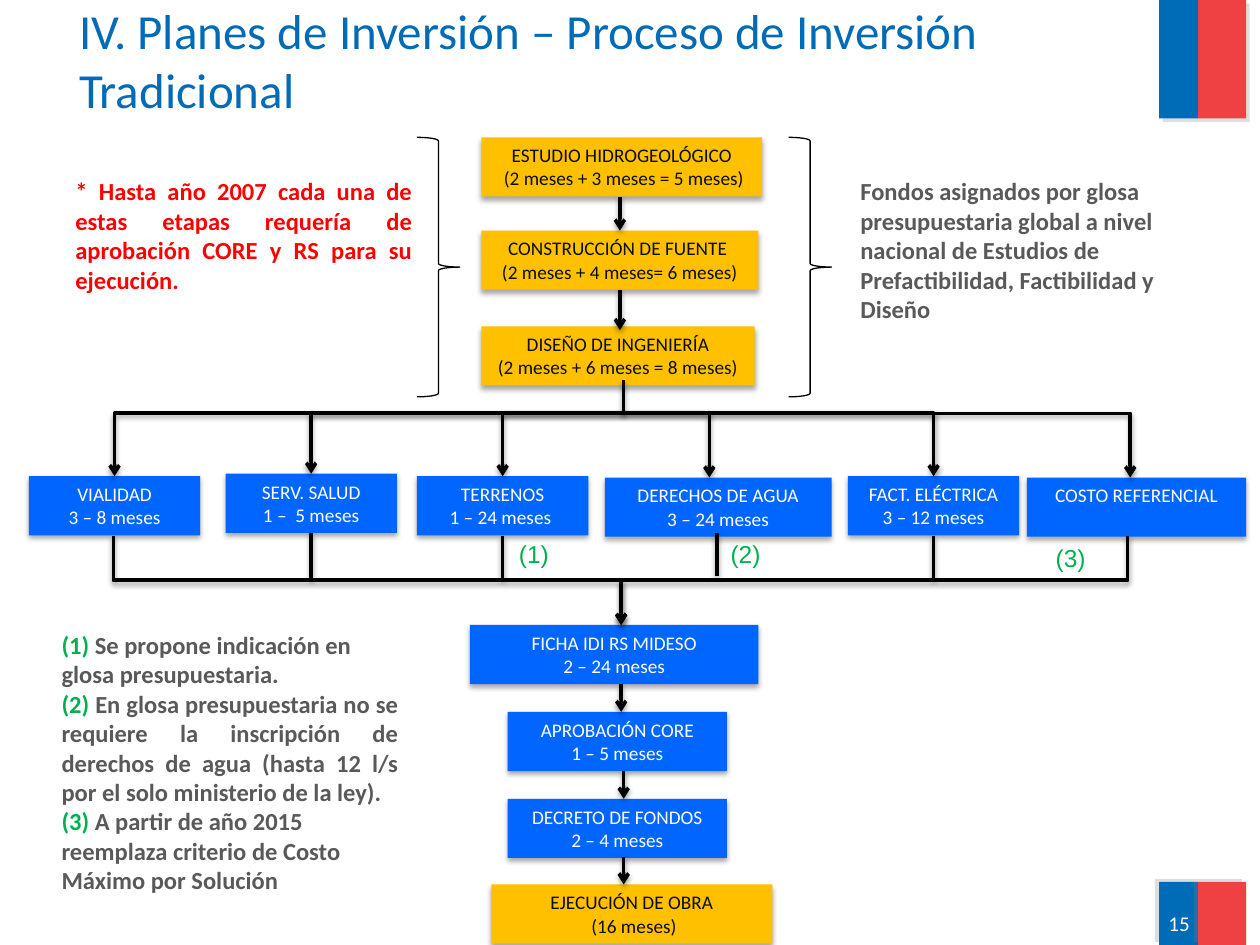
from dataclasses import dataclass

from lxml import etree
from pptx import Presentation
from pptx.dml.color import RGBColor
from pptx.enum.shapes import MSO_CONNECTOR, MSO_SHAPE
from pptx.enum.text import MSO_ANCHOR, PP_ALIGN
from pptx.oxml.ns import qn
from pptx.util import Inches, Pt

RECTANGLE, RIGHT_BRACE = MSO_SHAPE.RECTANGLE, MSO_SHAPE.RIGHT_BRACE
STRAIGHT, ELBOW = MSO_CONNECTOR.STRAIGHT, MSO_CONNECTOR.ELBOW
LEFT, CENTER, RIGHT, JUSTIFY = PP_ALIGN.LEFT, PP_ALIGN.CENTER, PP_ALIGN.RIGHT, PP_ALIGN.JUSTIFY
TOP, MIDDLE = MSO_ANCHOR.TOP, MSO_ANCHOR.MIDDLE
TOP_SITE, BOTTOM_SITE = 0, 2


@dataclass(frozen=True)
class Theme:
    font: str = "Calibri"
    mark_font: str = "Arial"
    title_blue: str = "006CB7"
    flag_red: str = "EF4144"
    amber: str = "FFC000"
    blue: str = "0066FF"
    black: str = "000000"
    dark: str = "0D0D0D"
    white: str = "FFFFFF"
    gray: str = "595959"
    red: str = "FF0000"
    green: str = "00B050"
    title_size: int = 28
    note_size: int = 14
    number_size: int = 12
    box_size: int = 11
    line_width: float = 2
    brace_width: float = 0.75
    # Shadows: colour, opacity %, blur pt, distance pt, angle
    box_shadow: tuple = ("000000", 35, 3.1, 1.8, 90)
    line_shadow: tuple = ("000000", 38, 3.1, 1.6, 90)
    flag_shadow: tuple = ("808080", 25, 0, 3, 45)
    foot_shadow: tuple = ("808080", 25, 0, 3, 215)


class FlowSlide:
    def __init__(self, slide, theme):
        self.shapes = slide.shapes
        self.theme = theme

    def cast_shadow(self, effects, shadow):
        color, opacity, blur, distance, angle = shadow
        outer = etree.SubElement(
            effects, qn("a:outerShdw"), blurRad=str(Pt(blur)), dist=str(Pt(distance)),
            dir=str(angle * 60000), rotWithShape="0")
        tint = etree.SubElement(outer, qn("a:srgbClr"), val=color)
        etree.SubElement(tint, qn("a:alpha"), val=str(opacity * 1000))

    def fill_text(self, shape, paragraphs, size, font=None, bold=False, anchor=TOP):
        """Each paragraph is (alignment, [(text, color), ...])."""
        frame = shape.text_frame
        frame.word_wrap = True
        frame.vertical_anchor = anchor
        for index, (alignment, runs) in enumerate(paragraphs):
            paragraph = frame.add_paragraph() if index else frame.paragraphs[0]
            paragraph.alignment = alignment
            for text, color in runs:
                run = paragraph.add_run()
                run.text = text
                run.font.name = font or self.theme.font
                run.font.size = Pt(size)
                run.font.bold = bold
                run.font.color.rgb = RGBColor.from_string(color)

    def text(self, left, top, width, height, paragraphs, size, **style):
        shape = self.shapes.add_textbox(*map(Inches, (left, top, width, height)))
        self.fill_text(shape, paragraphs, size, **style)

    def block(self, left, top, width, height, color, shadow):
        shape = self.shapes.add_shape(RECTANGLE, *map(Inches, (left, top, width, height)))
        shape.fill.solid()
        shape.fill.fore_color.rgb = RGBColor.from_string(color)
        shape.line.fill.background()
        shape.shadow.inherit = False
        self.cast_shadow(shape._element.spPr.find(qn("a:effectLst")), shadow)
        return shape

    def box(self, left, top, width, lines, color):
        theme = self.theme
        shape = self.block(left, top, width, 0.47, color, theme.box_shadow)
        ink = theme.dark if color == theme.amber else theme.white
        self.fill_text(shape, [(CENTER, [(line, ink)]) for line in lines], theme.box_size)
        return shape

    def brace(self, left, top, width, height):
        shape = self.shapes.add_shape(RIGHT_BRACE, *map(Inches, (left, top, width, height)))
        shape.fill.background()
        shape.line.color.rgb = RGBColor.from_string(self.theme.black)
        shape.line.width = Pt(self.theme.brace_width)
        shape.shadow.inherit = False

    def connector(self, kind, begin, end, arrow):
        line = self.shapes.add_connector(kind, *map(Inches, (*begin, *end)))
        line.line.color.rgb = RGBColor.from_string(self.theme.black)
        line.line.width = Pt(self.theme.line_width)
        properties = line._element.spPr
        if arrow:
            etree.SubElement(properties.find(qn("a:ln")), qn("a:tailEnd"), type="arrow")
        self.cast_shadow(etree.SubElement(properties, qn("a:effectLst")), self.theme.line_shadow)
        return line

    def straight(self, x, top, bottom, arrow=True, source=None, target=None):
        line = self.connector(STRAIGHT, (x, top), (x, bottom), arrow)
        if source is not None:
            line.begin_connect(source, BOTTOM_SITE)
        if target is not None:
            line.end_connect(target, TOP_SITE)

    def branch(self, begin, end):
        """One bend: across, then down."""
        line = self.connector(ELBOW, begin, end, True)
        line._element.spPr.find(qn("a:prstGeom")).set("prst", "bentConnector2")

    def gather(self, begin, end):
        """Two bends: down, across, down, as a quarter-turned elbow."""
        (x1, y1), (x2, y2) = begin, end
        middle_x, middle_y = (x1 + x2) / 2, (y1 + y2) / 2
        half_x, half_y = (x2 - x1) / 2, (y2 - y1) / 2
        line = self.connector(ELBOW, (middle_x - half_y, middle_y + half_x),
                              (middle_x + half_y, middle_y - half_x), True)
        line._element.spPr.find(qn("a:xfrm")).set("rot", str(90 * 60000))


def main():
    theme = Theme()
    presentation = Presentation()
    presentation.slide_width, presentation.slide_height = Inches(10), Inches(7.5)
    flow = FlowSlide(presentation.slides.add_slide(presentation.slide_layouts[6]), theme)

    # Colour bars, page number and title
    for top, height, shadow in ((0, 0.94, theme.flag_shadow), (7, 0.5, theme.foot_shadow)):
        flow.block(9.2, top, 0.31, height, theme.title_blue, shadow)
        flow.block(9.51, top, 0.38, height, theme.flag_red, shadow)
    flow.text(9.02, 7.13, 0.52, 0.4, [(RIGHT, [("15", theme.white)])],
              theme.number_size, anchor=MIDDLE)
    flow.text(0.53, 0, 8.5, 0.94,
              [(LEFT, [("IV. Planes de Inversión – Proceso de Inversión Tradicional", theme.title_blue)])],
              theme.title_size, anchor=MIDDLE)

    # Main column, top to bottom
    steps = [
        (3.82, 1.09, 2.23, ("ESTUDIO HIDROGEOLÓGICO", " (2 meses + 3 meses = 5 meses)"), theme.amber),
        (3.82, 1.83, 2.2, ("CONSTRUCCIÓN DE FUENTE ", "(2 meses + 4 meses= 6 meses)"), theme.amber),
        (3.82, 2.59, 2.17, ("DISEÑO DE INGENIERÍA", "(2 meses + 6 meses = 8 meses)"), theme.amber),
        (3.73, 4.96, 2.29, ("FICHA IDI RS MIDESO", "2 – 24 meses"), theme.blue),
        (4.03, 5.65, 1.74, ("APROBACIÓN CORE", "1 – 5 meses"), theme.blue),
        (4.03, 6.34, 1.74, ("DECRETO DE FONDOS", "2 – 4 meses"), theme.blue),
        (3.9, 7.02, 2.23, ("EJECUCIÓN DE OBRA", " (16 meses)"), theme.amber),
    ]
    source = [flow.box(*step) for step in steps][1]

    # Parallel permits
    permits = [
        (0.23, 3.78, 1.36, ("VIALIDAD", "3 – 8 meses")),
        (1.79, 3.76, 1.36, ("SERV. SALUD", "1 –  5 meses")),
        (3.31, 3.78, 1.36, ("TERRENOS", "1 – 24 meses ")),
        (4.8, 3.79, 1.8, ("DERECHOS DE AGUA", "3 – 24 meses")),
        (6.73, 3.78, 1.36, ("FACT. ELÉCTRICA", "3 – 12 meses")),
        (8.15, 3.79, 1.74, ("COSTO REFERENCIAL",)),
    ]
    permit_boxes = [flow.box(*permit, theme.blue) for permit in permits]

    # Arrows down the main column
    flow.straight(4.92, 1.56, 1.83, target=source)
    flow.straight(4.92, 2.3, 2.62, source=source)
    for x, top, bottom in ((4.93, 5.43, 5.65), (4.95, 6.12, 6.34), (4.95, 6.8, 7.02)):
        flow.straight(x, top, bottom)

    # Fan out to the permits
    split_y = 3.28
    flow.straight(4.95, 3.02, split_y, arrow=False)
    for x, (_, top, _, _) in zip((0.91, 2.47, 3.99, 5.63, 7.41, 8.97), permits):
        flow.branch((4.95, split_y), (x, top))

    # Gather the permits again
    for x in (0.9, 8.95):
        flow.gather((x, 4.25), (4.93, 4.96))
    for x, index in ((2.47, 1), (3.99, 2), (7.41, 4)):
        flow.straight(x, 4.25, 4.6, arrow=False, source=permit_boxes[index])
    flow.straight(5.69, 4.23, 4.57, arrow=False)

    # Braces and side notes
    for left in (3.31, 6.26):
        flow.brace(left, 1.09, 0.34, 2.06)
    notes = [
        (0.5, 1.35, 1.04, [(JUSTIFY, [(
            "* Hasta año 2007 cada una de estas etapas requería de aprobación CORE y RS "
            "para su ejecución.", theme.red)])]),
        (6.73, 1.35, 1.28, [(LEFT, [(
            "Fondos asignados por glosa presupuestaria global a nivel nacional de Estudios "
            "de Prefactibilidad, Factibilidad y Diseño", theme.gray)])]),
        (0.39, 4.95, 2.46, [
            (alignment, [(f"({number}) ", theme.green), (text, theme.gray)])
            for number, (alignment, text) in enumerate((
                (LEFT, "Se propone indicación en glosa presupuestaria."),
                (JUSTIFY, "En glosa presupuestaria no se requiere la inscripción de derechos "
                          "de agua (hasta 12 l/s por el solo ministerio de la ley)."),
                (LEFT, "A partir de año 2015 reemplaza criterio de Costo Máximo por Solución"),
            ), start=1)]),
    ]
    for left, top, height, paragraphs in notes:
        flow.text(left, top, 2.87, height, paragraphs, theme.note_size, bold=True)

    # Note marks beside the permits
    for number, (left, top) in enumerate(((4.02, 4.23), (5.7, 4.23), (8.28, 4.26)), start=1):
        flow.text(left, top, 0.65, 0.34, [(LEFT, [(f"({number})", theme.green)])],
                  theme.note_size, font=theme.mark_font)

    presentation.save("out.pptx")


if __name__ == "__main__":
    main()
